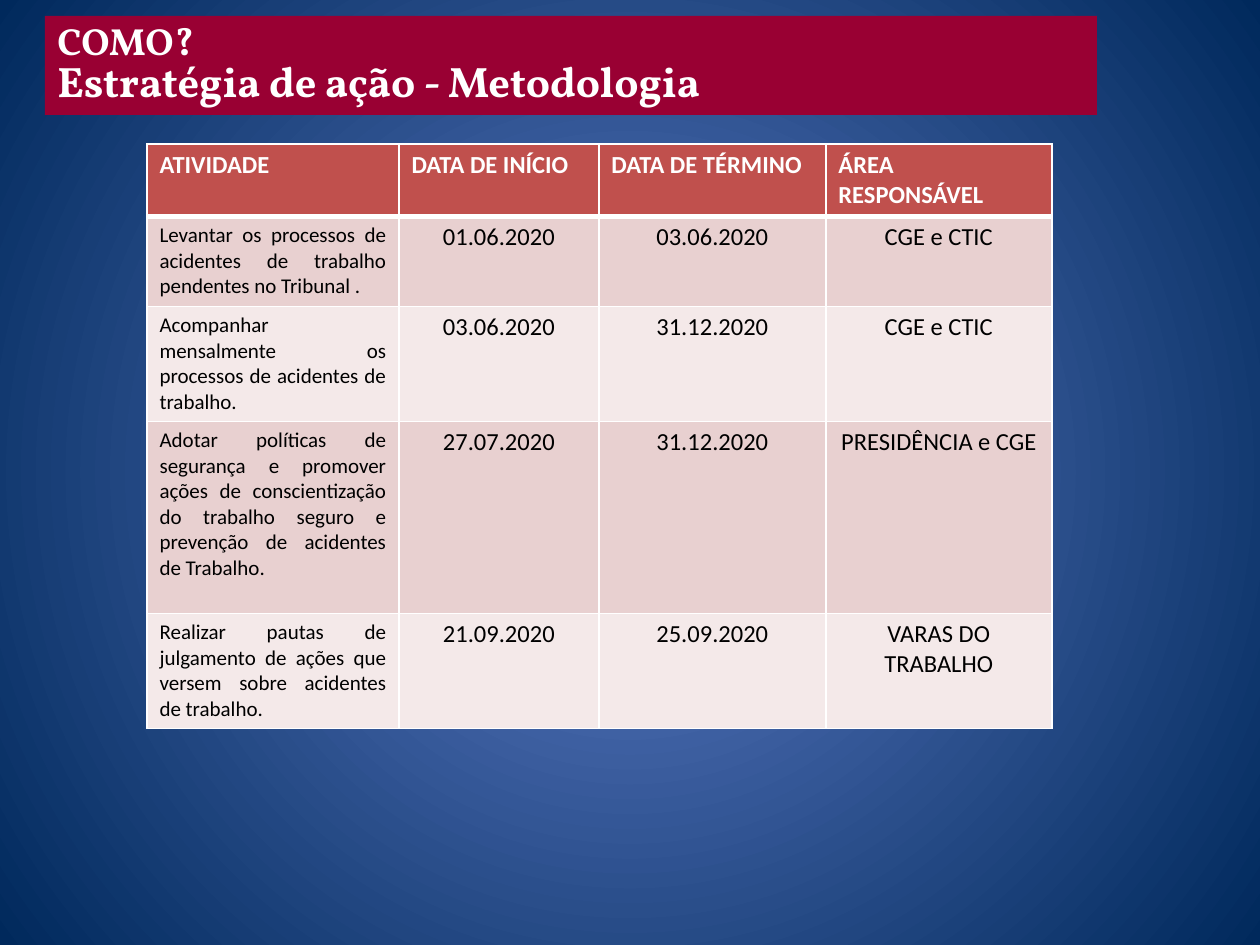
from dataclasses import dataclass

from lxml import etree
from pptx import Presentation
from pptx import util as u
from pptx.dml.color import RGBColor
from pptx.enum import shapes, text
from pptx.oxml.ns import qn

PX = u.Inches(1) // 126


@dataclass(frozen=True)
class Theme:
    glow: str = "5E7CC5"
    edge: str = "00295C"
    banner: str = "990033"
    header: str = "C0504D"
    bands: tuple = ("E8D0D0", "F4E9E9")
    light: str = "FFFFFF"
    dark: str = "000000"
    title_font: str = "Vollkorn"
    body_font: str = "Calibri"
    question_size: float = 21.6
    title_size: float = 24.3
    table_size: float = 14
    activity_size: float = 12


class SlideBuilder:
    def __init__(self, slide, theme):
        self.slide = slide
        self.theme = theme

    def background(self):
        """Fill the slide with a circular gradient around its centre."""
        fill = self.slide.background.fill
        fill.gradient()
        for stop, color in zip(fill.gradient_stops, (self.theme.glow, self.theme.edge)):
            stop.color.rgb = RGBColor.from_string(color)
        gradient = self.slide.element.find(".//" + qn("a:gradFill"))
        gradient.remove(gradient.find(qn("a:lin")))
        circle = etree.SubElement(gradient, qn("a:path"), path="circle")
        etree.SubElement(circle, qn("a:fillToRect"), l="50000", t="50000", r="50000", b="50000")

    def style(self, para, font, size, color, bold, align):
        para.alignment = align
        for span in para.runs:
            span.font.name = font
            span.font.size = u.Pt(size)
            span.font.bold = bold
            span.font.color.rgb = RGBColor.from_string(color)

    def banner(self, left, top, width, height, lines):
        box = self.slide.shapes.add_shape(
            shapes.MSO_SHAPE.RECTANGLE, left * PX, top * PX, width * PX, height * PX)
        box.shadow.inherit = False
        box.fill.solid()
        box.fill.fore_color.rgb = RGBColor.from_string(self.theme.banner)
        box.line.fill.background()
        frame = box.text_frame
        frame.word_wrap = True
        frame.vertical_anchor = text.MSO_ANCHOR.MIDDLE
        frame.text = "\n".join(line for line, _ in lines)
        for para, (_, size) in zip(frame.paragraphs, lines):
            para.line_spacing = 0.85
            self.style(para, self.theme.title_font, size, self.theme.light, True,
                       text.PP_ALIGN.LEFT)

    def borders(self, cell, bottom):
        """Draw light cell edges, with the bottom edge as wide as given in points."""
        properties = cell._tc.get_or_add_tcPr()
        for index, (side, width) in enumerate(
                (("lnL", 1), ("lnR", 1), ("lnT", 1), ("lnB", bottom))):
            line = etree.Element(qn("a:" + side), w=str(u.Pt(width)))
            solid = etree.SubElement(line, qn("a:solidFill"))
            etree.SubElement(solid, qn("a:srgbClr"), val=self.theme.light)
            properties.insert(index, line)

    def cell(self, cell, content, fill, size, color, bold, align, bottom=1):
        cell.text_frame.text = content
        cell.fill.solid()
        cell.fill.fore_color.rgb = RGBColor.from_string(fill)
        self.style(cell.text_frame.paragraphs[0], self.theme.body_font, size, color, bold, align)
        self.borders(cell, bottom)

    def table(self, left, top, widths, heights, header, rows):
        theme = self.theme
        table = self.slide.shapes.add_table(
            len(heights), len(widths), left * PX, top * PX,
            sum(widths) * PX, sum(heights) * PX).table
        for column, width in zip(table.columns, widths):
            column.width = width * PX
        for row, height in zip(table.rows, heights):
            row.height = height * PX
        for column, label in enumerate(header):
            self.cell(table.cell(0, column), label, theme.header, theme.table_size,
                      theme.light, True, text.PP_ALIGN.LEFT, bottom=3)
        for number, row in enumerate(rows):
            band = theme.bands[number % 2]
            for column, content in enumerate(row):
                if column == 0:
                    size, align = theme.activity_size, text.PP_ALIGN.JUSTIFY
                else:
                    size, align = theme.table_size, text.PP_ALIGN.CENTER
                self.cell(table.cell(number + 1, column), content, band, size,
                          theme.dark, False, align)


HEADER = ("ATIVIDADE", "DATA DE INÍCIO", "DATA DE TÉRMINO", "ÁREA RESPONSÁVEL")
ACTIVITIES = (
    ("Levantar os processos de acidentes de trabalho pendentes no Tribunal .",
     "01.06.2020", "03.06.2020", "CGE e CTIC"),
    ("Acompanhar mensalmente os processos de acidentes de trabalho.",
     "03.06.2020", "31.12.2020", "CGE e CTIC"),
    ("Adotar políticas de segurança e promover ações de conscientização do trabalho "
     "seguro e prevenção de acidentes de Trabalho.",
     "27.07.2020", "31.12.2020", "PRESIDÊNCIA e CGE"),
    ("Realizar pautas de julgamento de ações que versem sobre acidentes de trabalho.",
     "21.09.2020", "25.09.2020", "VARAS DO TRABALHO"),
)


def main():
    deck = Presentation()
    deck.slide_width, deck.slide_height = 1260 * PX, 945 * PX
    theme = Theme()
    page = SlideBuilder(deck.slides.add_slide(deck.slide_layouts[6]), theme)
    page.background()
    page.banner(45, 16, 1052, 99, (
        ("COMO?", theme.question_size),
        ("Estratégia de ação - Metodologia", theme.title_size),
    ))
    page.table(147, 144, (252, 200, 227, 226), (71, 90, 115, 192, 115), HEADER, ACTIVITIES)
    deck.save("out.pptx")


if __name__ == "__main__":
    main()
